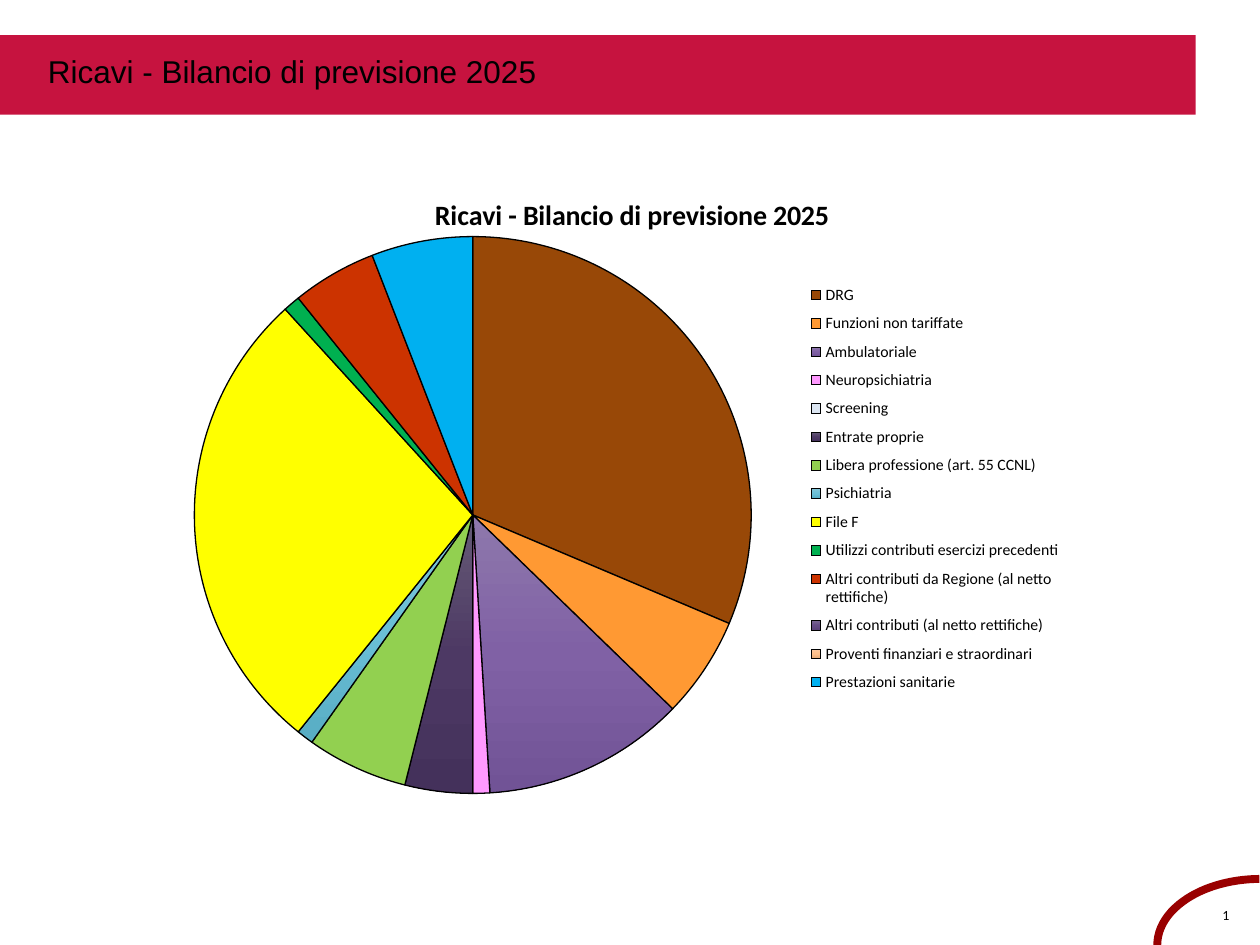
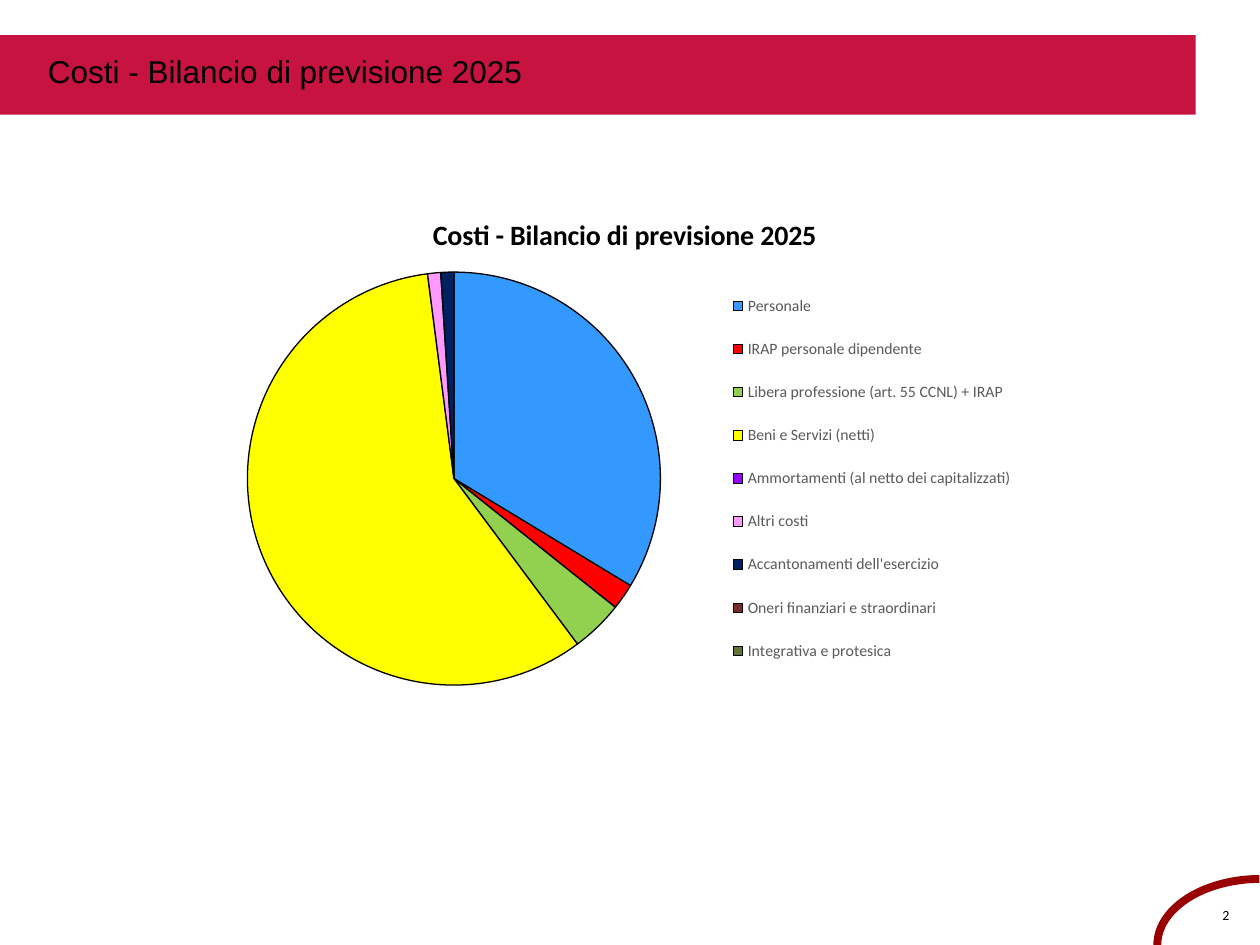
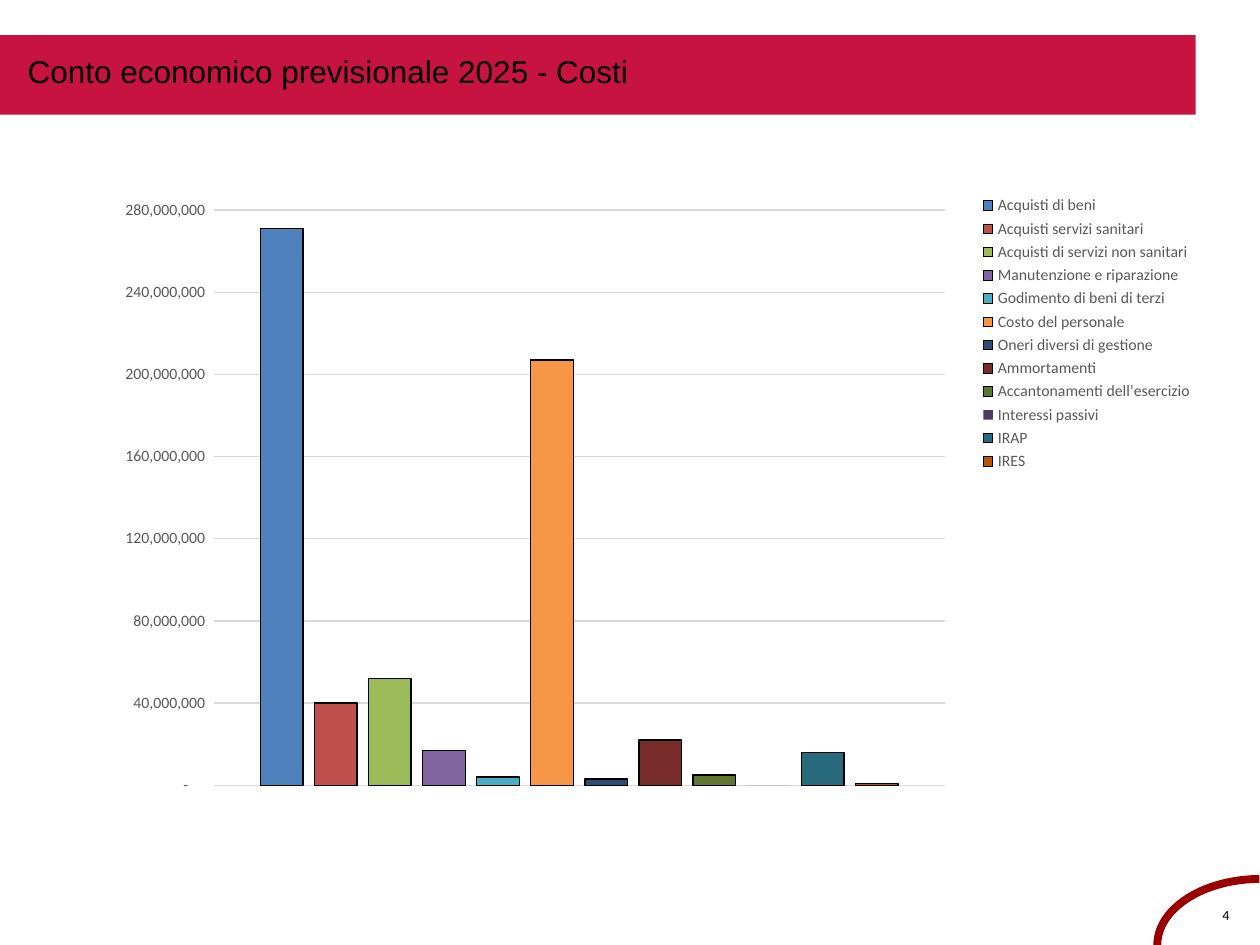
"""Builds three budget slides: two pie charts and one column chart."""
import copy

import lxml.etree
import pptx
import pptx.chart.data
import pptx.dml.color
import pptx.enum.chart
import pptx.enum.shapes
import pptx.enum.text
import pptx.oxml.ns
import pptx.util

COLORS = {
    "band": "C6133F", "arc": "990000", "black": "000000", "gray": "595959", "grid": "D9D9D9",
    "brown": "984807", "orange": "FF9933", "pink": "FF99FF", "pale blue": "DCE6F2",
    "lime": "92D050", "yellow": "FFFF00", "green": "00B050", "brick": "CC3300",
    "sky": "00B0F0", "azure": "3399FF", "red": "FF0000", "purple": "9900FF",
    "navy": "002060", "maroon": "772C2A", "olive": "5F7530", "blue": "4F81BD",
    "rose": "C0504D", "leaf": "9BBB59", "violet": "8064A2", "aqua": "4BACC6",
    "apricot": "F79646", "steel": "2C4D75", "plum": "4D3B62", "teal": "276A7C", "rust": "B65708",
    "violet light": "8E78AC", "violet mid": "8061A5", "violet dark": "715396",
    "plum light": "665B76", "plum mid": "4D3964", "plum dark": "44315B",
    "aqua light": "81C4D7", "aqua mid": "6ABFD6", "aqua dark": "58ADC4",
    "grape light": "796792", "grape mid": "664C86", "grape dark": "5A4179",
    "peach light": "FCC89F", "peach mid": "FFC08B", "peach dark": "E5AA79",
}
GRADIENTS = ("violet shade", "plum shade", "aqua shade", "grape shade", "peach shade")
AMOUNT_FORMAT = r'_ * #,##0_ ;_ * \-#,##0_ ;_ * "-"??_ ;_ '
WIDTH, HEIGHT = 10, 7.5
MILLION = 1_000_000

REVENUES = [
    ("DRG", 32, "brown"),
    ("Funzioni non tariffate", 6, "orange"),
    ("Ambulatoriale", 12, "violet shade"),
    ("Neuropsichiatria", 1, "pink"),
    ("Screening", 0, "pale blue"),
    ("Entrate proprie", 4, "plum shade"),
    ("Libera professione (art. 55 CCNL)", 6, "lime"),
    ("Psichiatria", 1, "aqua shade"),
    ("File F", 28, "yellow"),
    ("Utilizzi contributi esercizi precedenti", 1, "green"),
    ("Altri contributi da Regione (al netto rettifiche)", 5, "brick"),
    ("Altri contributi (al netto rettifiche)", 0, "grape shade"),
    ("Proventi finanziari e straordinari", 0, "peach shade"),
    ("Prestazioni sanitarie", 6, "sky"),
]
COSTS = [
    ("Personale", 33, "azure"),
    ("IRAP personale dipendente", 2, "red"),
    ("Libera professione (art. 55 CCNL) + IRAP", 4, "lime"),
    ("Beni e Servizi (netti)", 57, "yellow"),
    ("Ammortamenti (al netto dei capitalizzati)", 0, "purple"),
    ("Altri costi", 1, "pink"),
    ("Accantonamenti dell'esercizio", 1, "navy"),
    ("Oneri finanziari e straordinari", 0, "maroon"),
    ("Integrativa e protesica", 0, "olive"),
]
COST_MILLIONS = [
    ("Acquisti di beni", 271, "blue"),
    ("Acquisti servizi sanitari", 40, "rose"),
    ("Acquisti di servizi non sanitari", 52, "leaf"),
    ("Manutenzione e riparazione", 17, "violet"),
    ("Godimento di beni di terzi", 4, "aqua"),
    ("Costo del personale", 207, "apricot"),
    ("Oneri diversi di gestione", 3, "steel"),
    ("Ammortamenti", 22, "maroon"),
    ("Accantonamenti dell’esercizio", 5, "olive"),
    ("Interessi passivi", 0, "plum"),
    ("IRAP", 16, "teal"),
    ("IRES", 1, "rust"),
]
SLIDES = [
    {"title": "Ricavi - Bilancio di previsione 2025", "number": "1", "title_left": 0.28,
     "kind": "pie", "rows": REVENUES, "at": (1.22, 1.41, 7.56, 5.2), "legend_color": "black",
     "plot": (0.04, 0.09, 0.59, 0.85), "legend": (0.68, 0.15, 0.28, 0.65), "heading": (0.29, 0.02)},
    {"title": "Costi - Bilancio di previsione 2025", "number": "2", "title_left": 0.28,
     "kind": "pie", "rows": COSTS, "at": (1.53, 1.54, 6.91, 4.43), "legend_color": "gray",
     "plot": (0.02, 0.14, 0.56, 0.74), "legend": (0.61, 0.14, 0.34, 0.74), "heading": (0.27, 0.03)},
    {"title": "Conto economico previsionale 2025 - Costi", "number": "4", "title_left": 0.12,
     "kind": "column", "rows": COST_MILLIONS, "at": (0.83, 1.52, 8.66, 4.91),
     "legend_color": "gray", "plot": (0.1, 0.03, 0.67, 0.93), "legend": (0.8, 0, 0.2, 0.46)},
]


def inches(*lengths):
    return [pptx.util.Inches(length) for length in lengths]


def color(name):
    return pptx.dml.color.RGBColor.from_string(COLORS[name])


def set_font(font, size, name="Calibri", hue="black", bold=False):
    font.size, font.name, font.bold = pptx.util.Pt(size), name, bold
    font.color.rgb = color(hue)


def set_line(line, hue, width=0.75):
    line.color.rgb = color(hue)
    line.width = pptx.util.Pt(width)


def set_fill(fill, name):
    if name in GRADIENTS:
        fill.gradient()
        fill.gradient_angle = 270
    else:
        fill.solid()
        fill.fore_color.rgb = color(name)


def color_gradients(chart, fills):
    stop_lists = chart.element.iter(pptx.oxml.ns.qn("a:gsLst"))
    for stop_list, (fill, name) in zip(stop_lists, fills):
        stop_list.insert(1, copy.deepcopy(stop_list[0]))
        family = name.split()[0]
        for stop, position, tone in zip(fill.gradient_stops, (0, 0.5, 1), ("light", "mid", "dark")):
            stop.position = position
            stop.color.rgb = color(f"{family} {tone}")


def place(parent, index, shares, inner=False):
    qn = pptx.oxml.ns.qn
    for layout in parent.findall(qn("c:layout")):
        parent.remove(layout)
    layout = lxml.etree.Element(qn("c:layout"))
    manual = lxml.etree.SubElement(layout, qn("c:manualLayout"))
    settings = [("layoutTarget", "inner")] if inner else []
    settings += [("xMode", "edge"), ("yMode", "edge"), *zip("xywh", shares)]
    for tag, value in settings:
        lxml.etree.SubElement(manual, qn(f"c:{tag}")).set("val", str(value))
    parent.insert(index, layout)


def add_chart(page, content):
    is_pie = content["kind"] == "pie"
    types = pptx.enum.chart.XL_CHART_TYPE
    positions = pptx.enum.chart.XL_LEGEND_POSITION
    names, values, hues = zip(*content["rows"])
    data = pptx.chart.data.CategoryChartData()
    if is_pie:
        data.categories = names
        data.add_series("Series 1", values)
    else:
        data.categories = ["1"]
        for name, value in zip(names, values):
            data.add_series(name, [value * MILLION])
    chart_type = types.PIE if is_pie else types.COLUMN_CLUSTERED
    chart = page.shapes.add_chart(chart_type, *inches(*content["at"]), data).chart
    set_font(chart.font, 10)
    plot = chart.plots[0]
    plot.vary_by_categories = is_pie

    if is_pie:
        parts = [plot.series[0].points[index] for index in range(len(names))]
    else:
        parts = list(plot.series)
    gradient_fills = []
    for part, value, hue in zip(parts, values, hues):
        set_fill(part.format.fill, hue)
        if hue in GRADIENTS:
            gradient_fills.append((part.format.fill, hue))
        if is_pie or value:
            set_line(part.format.line, "black")
    color_gradients(chart, gradient_fills)

    chart.has_legend = True
    chart.legend.position = positions.RIGHT if is_pie else positions.CORNER
    chart.legend.include_in_layout = False
    set_font(chart.legend.font, 9, hue=content["legend_color"])
    place(chart.element.find(".//" + pptx.oxml.ns.qn("c:legend")), 1, content["legend"])
    place(chart.element.find(".//" + pptx.oxml.ns.qn("c:plotArea")), 0, content["plot"], inner=True)

    chart.has_title = is_pie
    if is_pie:
        heading = chart.chart_title
        heading.include_in_layout = False
        heading.text_frame.text = content["title"]
        set_font(heading.text_frame.paragraphs[0].font, 16, bold=True)
        place(heading.element, 1, content["heading"])
    else:
        format_axes(chart, plot)


def format_axes(chart, plot):
    plot.gap_width, plot.overlap = 219, -27
    chart.category_axis.visible = False
    axis = chart.value_axis
    axis.minimum_scale, axis.maximum_scale, axis.major_unit = 0, 280 * MILLION, 40 * MILLION
    axis.major_tick_mark = axis.minor_tick_mark = pptx.enum.chart.XL_TICK_MARK.NONE
    axis.format.line.fill.background()
    set_line(axis.major_gridlines.format.line, "grid")
    axis.tick_labels.number_format = AMOUNT_FORMAT
    axis.tick_labels.number_format_is_linked = False
    set_font(axis.tick_labels.font, 9, hue="gray")


def decorate_layout(layout, page):
    shapes = pptx.enum.shapes.MSO_SHAPE
    band = page.shapes.add_shape(shapes.RECTANGLE, *inches(0, 0.28, 9.49, 0.63))
    set_fill(band.fill, "band")
    band.line.fill.background()
    arc = page.shapes.add_shape(shapes.ARC, *inches(9.48, 6.68, 1.05, 1.64))
    arc.rotation = 270
    arc.adjustments[0], arc.adjustments[1] = 162, 215.34
    arc.fill.background()
    set_line(arc.line, "arc", 4.5)
    for shape in (band, arc):
        shape.shadow.inherit = False
        layout.shapes.element.append(shape.element)


def add_title(page, content):
    title = page.shapes.title
    left = content["title_left"]
    title.left, title.top, title.width, title.height = inches(left, 0.36, 6.5 - left, 0.71)
    frame = title.text_frame
    frame.text = content["title"]
    frame.word_wrap = True
    frame.auto_size = pptx.enum.text.MSO_AUTO_SIZE.NONE
    frame.vertical_anchor = pptx.enum.text.MSO_ANCHOR.TOP
    para = frame.paragraphs[0]
    para.alignment = pptx.enum.text.PP_ALIGN.LEFT
    set_font(para.font, 18, "Arial")


def add_number(page, number):
    frame = page.shapes.add_textbox(*inches(9.57, 7.18, 0.32, 0.16)).text_frame
    frame.word_wrap = True
    frame.margin_left = frame.margin_right = frame.margin_bottom = 0
    frame.margin_top = pptx.util.Inches(0.03)
    para = frame.paragraphs[0]
    para.text = number
    para.alignment = pptx.enum.text.PP_ALIGN.CENTER
    para.line_spacing = 0.93
    set_font(para.font, 8)


def main():
    deck = pptx.Presentation()
    deck.slide_width, deck.slide_height = inches(WIDTH, HEIGHT)
    layout = deck.slide_layouts.get_by_name("Title Only")
    for index, content in enumerate(SLIDES):
        page = deck.slides.add_slide(layout)
        if index == 0:
            decorate_layout(layout, page)
        add_title(page, content)
        add_number(page, content["number"])
        add_chart(page, content)
    deck.save("out.pptx")


if __name__ == "__main__":
    main()
